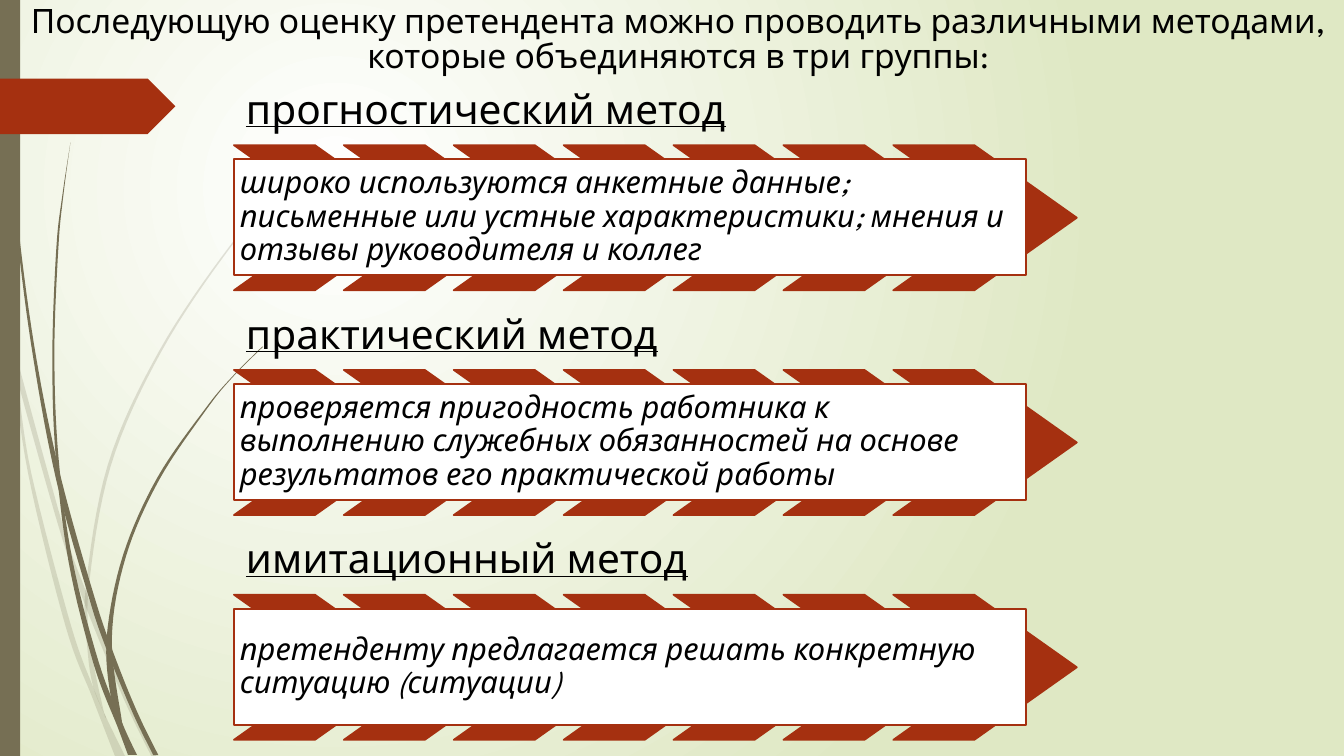
import lxml.etree
import pptx
import pptx.dml.color
import pptx.enum.shapes
import pptx.enum.text
import pptx.oxml.ns
import pptx.util

Inches = pptx.util.Inches
RGBColor = pptx.dml.color.RGBColor
MSO_SHAPE = pptx.enum.shapes.MSO_SHAPE
MSO_ANCHOR = pptx.enum.text.MSO_ANCHOR
PP_ALIGN = pptx.enum.text.PP_ALIGN
qn = pptx.oxml.ns.qn

WHITE = RGBColor(0xFF, 0xFF, 0xFF)
BLACK = RGBColor(0, 0, 0)
PALE_GREEN = RGBColor(0xDF, 0xE8, 0xC4)
OLIVE = RGBColor(0x76, 0x6F, 0x54)
RUST = RGBColor(0xA5, 0x30, 0x10)
FONT = "League Spartan"

TITLE = ("Последующую оценку претендента можно проводить различными методами, "
         "которые объединяются в три группы:")
METHODS = [
    ("прогностический метод",
     "широко используются анкетные данные; письменные или устные "
     "характеристики; мнения и отзывы руководителя и коллег"),
    ("практический метод",
     "проверяется пригодность работника к выполнению служебных обязанностей "
     "на основе результатов его практической работы"),
    ("имитационный метод",
     "претенденту предлагается решать конкретную ситуацию (ситуации)"),
]

PALE_STEMS = [
    ([(0, 2.99), (0.1, 3.44), (0.17, 3.76), (0.58, 5.22), (0.84, 5.99),
      (1.23, 6.94), (1.5, 7.5)],
     [(0, 2.82), (0.09, 3.22), (0.14, 3.45), (0.62, 5.2), (0.85, 5.86),
      (1.27, 6.92), (1.55, 7.5)]),
    ([(0.11, 3.5), (0.28, 4.7), (0.65, 6.21), (0.92, 6.93), (1.14, 7.5)],
     [(0.11, 3.5), (0.17, 3.76), (0.31, 4.69), (0.7, 6.19), (0.93, 6.83),
      (1.05, 7.11), (1.24, 7.5)]),
    ([(3.12, 1.53), (2.89, 1.75), (2.28, 2.44), (1.58, 3.48), (1.07, 4.61),
      (0.85, 5.84), (0.87, 6.46), (0.93, 6.83), (1.05, 7.11)],
     [(3.12, 1.54), (2.9, 1.75), (2.29, 2.45), (1.6, 3.49), (1.1, 4.62),
      (0.88, 5.84), (0.91, 6.46), (1.03, 7.06), (1.05, 7.11)]),
]
DARK_STEMS = [
    ([(0.03, 0), (0.04, 0.48), (0.07, 1.1), (0.17, 2.33), (0.33, 3.55),
      (0.56, 4.77), (0.88, 5.92), (1.06, 6.45), (1.32, 7.08), (1.52, 7.49)],
     [(0.04, 0), (0.05, 0.48), (0.08, 1.09), (0.19, 2.32), (0.36, 3.55),
      (0.6, 4.72), (0.93, 5.9), (1.13, 6.49), (1.36, 7.06), (1.57, 7.49)]),
    ([(0.7, 1.41), (0.62, 1.93), (0.56, 2.45), (0.52, 3.49), (0.55, 4.49),
      (0.68, 5.57), (0.93, 6.59), (1.17, 7.22), (1.27, 7.49)],
     [(0.7, 1.41), (0.63, 1.93), (0.58, 2.45), (0.54, 3.49), (0.58, 4.53),
      (0.72, 5.56), (0.98, 6.57), (1.22, 7.19), (1.36, 7.49)]),
    ([(2.6, 3.44), (2.31, 3.73), (2.04, 4.05), (1.56, 4.74), (1.22, 5.51),
      (1.06, 6.31), (1.1, 6.91), (1.22, 7.19)],
     [(2.61, 3.44), (2.31, 3.74), (2.05, 4.06), (1.58, 4.76), (1.25, 5.52),
      (1.11, 6.33), (1.21, 7.16), (1.22, 7.19)]),
]


def smooth(points, steps=8):
    padded = [points[0], *points, points[-1]]
    curve = []
    for a, b, c, d in zip(padded, padded[1:], padded[2:], padded[3:]):
        for step in range(steps):
            t = step / steps
            curve.append(tuple(
                q + t * ((r - p) + t * ((2 * p - 5 * q + 4 * r - s)
                                        + t * (3 * q - p - 3 * r + s))) / 2
                for p, q, r, s in zip(a, b, c, d)))
    return curve + [points[-1]]


def paint(shape, fill, line=None):
    shape.shadow.inherit = False
    shape.fill.solid()
    shape.fill.fore_color.rgb = fill
    if line is None:
        shape.line.fill.background()
    else:
        shape.line.color.rgb = line
        shape.line.width = pptx.util.Pt(1.25)


def write(shape, text, size, anchor, inset, align=PP_ALIGN.LEFT, spacing=0.9):
    frame = shape.text_frame
    frame.word_wrap = True
    frame.auto_size = pptx.enum.text.MSO_AUTO_SIZE.NONE
    frame.vertical_anchor = anchor
    frame.margin_left = frame.margin_right = Inches(inset)
    frame.margin_top = frame.margin_bottom = Inches(inset)
    paragraph = frame.paragraphs[0]
    paragraph.text = text
    paragraph.alignment = align
    paragraph.line_spacing = spacing
    paragraph.space_before = pptx.util.Pt(0)
    paragraph.font.size = pptx.util.Pt(size)
    paragraph.font.name = FONT
    paragraph.font.color.rgb = BLACK
    return paragraph


def add_background(slide):
    fill = slide.background.fill
    fill.gradient()
    for stop, color in zip(fill.gradient_stops, (WHITE, PALE_GREEN)):
        stop.color.rgb = color
    gradient = slide.element.find(".//" + qn("a:gradFill"))
    gradient.remove(gradient.find(qn("a:lin")))
    circle = lxml.etree.SubElement(gradient, qn("a:path"), path="circle")
    lxml.etree.SubElement(circle, qn("a:fillToRect"),
                          l="50000", t="50000", r="100000", b="100000")


def add_stem(slide, left, top, sides, alpha=None):
    near, far = sides
    outline = [(Inches(left + x), Inches(top + y))
               for x, y in smooth(near) + smooth(far)[::-1]]
    builder = slide.shapes.build_freeform(*outline[0])
    builder.add_line_segments(outline[1:])
    stem = builder.convert_to_shape()
    paint(stem, OLIVE)
    if alpha is not None:
        color = stem.fill._xPr.find(".//" + qn("a:srgbClr"))
        lxml.etree.SubElement(color, qn("a:alpha"), val=str(alpha * 1000))


def add_side_decoration(slide, left, top, height):
    for sides in PALE_STEMS:
        add_stem(slide, left, top, sides, alpha=20)
    for sides in DARK_STEMS:
        add_stem(slide, left, top, sides)
    band = slide.shapes.add_shape(MSO_SHAPE.RECTANGLE, Inches(left), Inches(top),
                                  Inches(0.2), Inches(height))
    paint(band, OLIVE)
    tag = slide.shapes.add_shape(MSO_SHAPE.PENTAGON, Inches(left), Inches(top + 0.78),
                                 Inches(1.74), Inches(0.55))
    paint(tag, RUST)


def add_title(slide, left, top, width, height):
    title = slide.shapes.title
    title.left, title.top = Inches(left), Inches(top)
    title.width, title.height = Inches(width), Inches(height)
    write(title, TITLE, 24, MSO_ANCHOR.TOP, 0.05, PP_ALIGN.CENTER, 0.88)


def add_method(slide, left, top, width, name, description):
    heading = slide.shapes.add_textbox(Inches(left), Inches(top),
                                       Inches(width - 0.1), Inches(0.71))
    write(heading, name, 29, MSO_ANCHOR.BOTTOM, 0.12).font.underline = True
    for index in range(7):
        chevron = slide.shapes.add_shape(
            MSO_SHAPE.CHEVRON, Inches(left + 1.09 * index), Inches(top + 0.71),
            Inches(1.82), Inches(1.44))
        chevron.adjustments[0] = 0.706
        paint(chevron, RUST, RUST)
    box = slide.shapes.add_shape(MSO_SHAPE.RECTANGLE, Inches(left), Inches(top + 0.85),
                                 Inches(width), Inches(1.15))
    paint(box, WHITE, RUST)
    write(box, description, 22, MSO_ANCHOR.MIDDLE, 0.06).font.italic = True


def main():
    presentation = pptx.Presentation()
    presentation.slide_width = Inches(13.33)
    presentation.slide_height = Inches(7.5)
    slide = presentation.slides.add_slide(presentation.slide_layouts[5])
    add_background(slide)
    add_side_decoration(slide, 0, 0, 7.5)
    add_title(slide, 0.24, 0, 12.97, 1.12)
    for row, (name, description) in enumerate(METHODS):
        add_method(slide, 2.32, 0.73 + 2.23 * row, 7.86, name, description)
    presentation.save("out.pptx")


if __name__ == "__main__":
    main()
